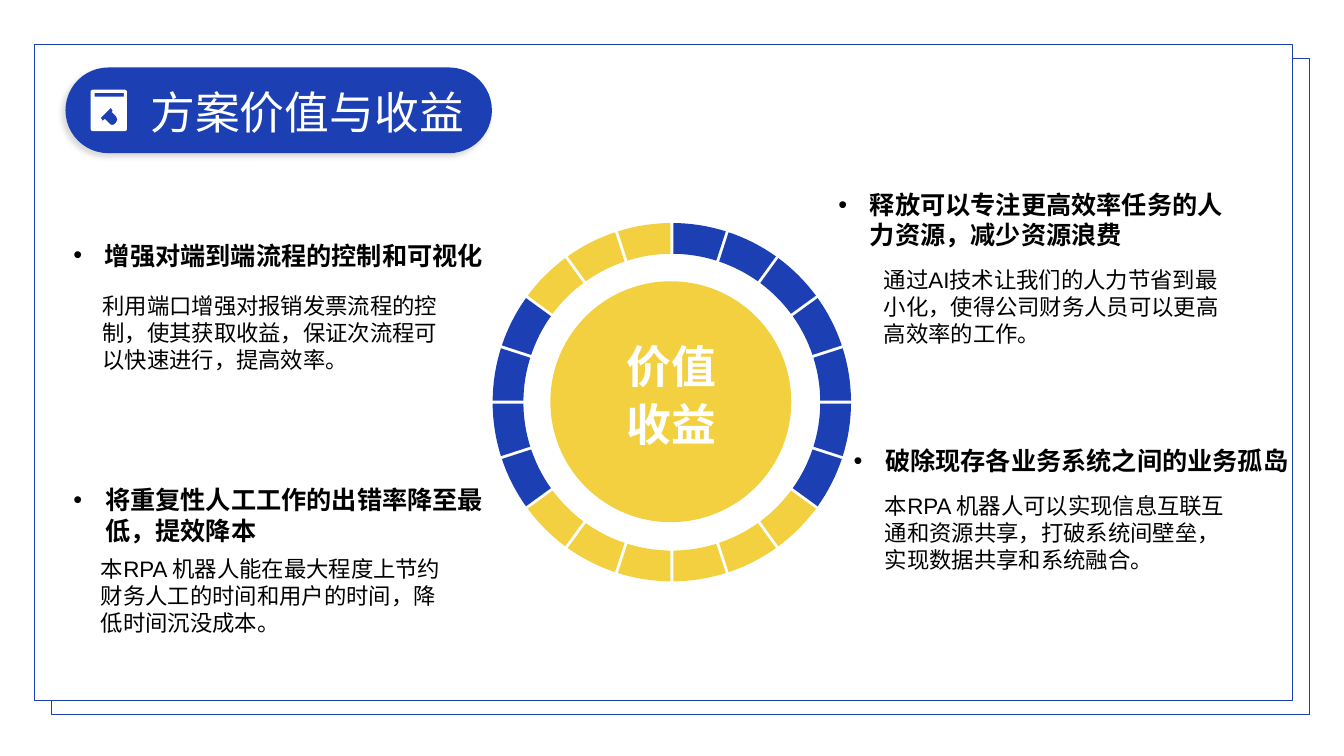
"""Build the slide on the value and benefits of the solution."""
from dataclasses import dataclass
from math import asin, cos, pi, sin

from lxml import etree
from pptx import Presentation
from pptx import util as u
from pptx.dml.color import RGBColor
from pptx.enum import shapes, text
from pptx.oxml import parse_xml
from pptx.oxml.ns import nsdecls, qn


@dataclass(frozen=True)
class Theme:
    blue: str = "1C40B3"
    yellow: str = "F3D040"
    white: str = "FFFFFF"
    black: str = "000000"
    font: str = "Arial"
    title_font: str = "Calibri"
    display: int = 32
    heading: int = 18
    body: int = 16


THEME = Theme()

TITLE = "方案价值与收益"
CENTRE_WORDS = ["价值", "收益"]
BENEFITS = [
    ("增强对端到端流程的控制和可视化", (45.4, 167.8, 309.6, 29.1),
     "利用端口增强对报销发票流程的控制，使其获取收益，保证次流程可以快速进行，提高效率。", (66.1, 205.2)),
    ("将重复性人工工作的出错率降至最低，提效降本", (45.4, 342.7, 310.3, 50.9),
     "本RPA 机器人能在最大程度上节约财务人工的时间和用户的时间，降低时间沉没成本。", (65, 393.1)),
    ("释放可以专注更高效率任务的人力资源，减少资源浪费", (591.8, 131.8, 302.4, 50.9),
     "通过AI技术让我们的人力节省到最小化，使得公司财务人员可以更高高效率的工作。", (624.2, 186.5)),
    ("破除现存各业务系统之间的业务孤岛", (602.6, 314.6, 347, 29.1),
     "本RPA 机器人可以实现信息互联互通和资源共享，打破系统间壁垒，实现数据共享和系统融合。", (625, 347.8)),
]
BODY_SIZE = (265, 65.5)
RING_COLOURS = ([THEME.blue] * 7 + [THEME.yellow] * 6
                + [THEME.blue] * 4 + [THEME.yellow] * 3)
RING_CENTRE = (479.9, 287.3)
RING_OUTER, RING_INNER, RING_GAP = 128, 106, 2.16
ARC_STEPS = 8
FRAMES = [(36.7, 41.8), (24.5, 31.7)]
FRAME_SIZE = (898.6, 468.7)
ICON = [
    [(66.2, 64.1), (89.3, 64.1), (90.4, 64.7), (90.7, 65.5), (90.7, 92.2), (90.4, 93.2),
     (89.3, 93.6), (66.2, 93.6), (65.1, 93.2), (64.8, 92.2), (64.8, 65.5), (65.1, 64.7)],
    [(67.7, 66.4), (67.7, 69.1), (88.6, 69.1), (88.6, 66.4)],
    [(82.8, 87.8), (81.5, 88.9), (79.9, 89.3), (78.7, 88.8), (77.8, 87.8), (74.9, 85),
     (73.4, 86.4), (72, 84.2), (79.2, 77), (80.6, 79.2), (79.9, 79.9), (82.8, 82.8),
     (83.9, 85.3)],
]


def points(values):
    return [u.Pt(value) for value in values]


def paint(shape, colour, line=None):
    shape.shadow.inherit = False
    shape.fill.solid()
    shape.fill.fore_color.rgb = RGBColor.from_string(colour)
    if line:
        shape.line.color.rgb = RGBColor.from_string(line)
        shape.line.width = u.Pt(0.5)
    else:
        shape.line.fill.background()
    return shape


def add_preset(page, kind, place, colour, line=None):
    return paint(page.shapes.add_shape(kind, *points(place)), colour, line)


def add_outline(page, contours, colour):
    contours = [[points(corner) for corner in contour] for contour in contours]
    builder = page.shapes.build_freeform(*contours[0][0], scale=1.0)
    builder.add_line_segments(contours[0][1:], close=True)
    for contour in contours[1:]:
        builder.move_to(*contour[0])
        builder.add_line_segments(contour[1:], close=True)
    return paint(builder.convert_to_shape(), colour)


def add_text(page, lines, place, size, colour=THEME.black, bold=False, font=THEME.font,
             bullet=False, centred=False, margins=(7.2, 3.6, 7.2, 3.6)):
    box = page.shapes.add_textbox(*points(place))
    frame = box.text_frame
    frame.word_wrap = True
    frame.auto_size = text.MSO_AUTO_SIZE.SHAPE_TO_FIT_TEXT
    (frame.margin_left, frame.margin_top,
     frame.margin_right, frame.margin_bottom) = points(margins)
    frame.text = "\n".join(lines)
    if centred:
        frame.vertical_anchor = text.MSO_ANCHOR.MIDDLE
    for para in frame.paragraphs:
        if centred:
            para.alignment = text.PP_ALIGN.CENTER
            para.space_after = u.Pt(3)
        if bullet:
            properties = para._p.get_or_add_pPr()
            properties.set("marL", str(u.Pt(22.5)))
            properties.set("indent", str(-u.Pt(22.5)))
            etree.SubElement(properties, qn("a:buFont"), typeface=THEME.font)
            etree.SubElement(properties, qn("a:buChar"), char="•")
        para.font.name = font
        para.font.size = u.Pt(size)
        para.font.bold = bold
        para.font.color.rgb = RGBColor.from_string(colour)


def arc(radius, start, end):
    trim = asin(RING_GAP / 2 / radius)
    first, sweep = start + trim, end - start - 2 * trim
    angles = [first + sweep * step / ARC_STEPS for step in range(ARC_STEPS + 1)]
    return [(RING_CENTRE[0] + radius * sin(angle), RING_CENTRE[1] - radius * cos(angle))
            for angle in angles]


def add_ring(page):
    turn = 2 * pi / len(RING_COLOURS)
    for index, colour in enumerate(RING_COLOURS):
        start, end = index * turn, (index + 1) * turn
        segment = arc(RING_OUTER, start, end) + arc(RING_INNER, start, end)[::-1]
        add_outline(page, [segment], colour)


def add_title(page):
    pill = add_preset(page, shapes.MSO_SHAPE.ROUNDED_RECTANGLE,
                      (46.8, 48.2, 304.6, 61.2), THEME.blue)
    pill.adjustments[0] = 0.5
    effects = pill._element.spPr.find(qn("a:effectLst"))
    effects.append(parse_xml(
        f'<a:outerShdw {nsdecls("a")} blurRad="{u.Pt(4)}" dist="{u.Pt(3)}" dir="8100000">'
        f'<a:srgbClr val="{THEME.black}"><a:alpha val="14000"/></a:srgbClr></a:outerShdw>'))
    add_outline(page, ICON, THEME.white)
    add_text(page, [TITLE], (107.3, 60.5, 238.3, 38.9), THEME.display, THEME.white,
             font=THEME.title_font, margins=(0, 0, 0, 0))


def main():
    deck = Presentation()
    deck.slide_width, deck.slide_height = points((960, 540))
    page = deck.slides.add_slide(deck.slide_layouts[6])
    for corner in FRAMES:
        add_preset(page, shapes.MSO_SHAPE.RECTANGLE, corner + FRAME_SIZE,
                   THEME.white, THEME.blue)
    add_ring(page)
    for heading, place, body, corner in BENEFITS:
        add_text(page, [heading], place, THEME.heading, bold=True, bullet=True)
        add_text(page, [body], corner + BODY_SIZE, THEME.body)
    add_preset(page, shapes.MSO_SHAPE.OVAL, (393.1, 200.9, 172.1, 172.1), THEME.yellow)
    add_text(page, CENTRE_WORDS, (412.6, 237.6, 129.6, 87.8), THEME.display, THEME.white,
             bold=True, centred=True, margins=(7.2, 3.6, 2.9, 3.6))
    add_title(page)
    deck.save("out.pptx")


if __name__ == "__main__":
    main()
